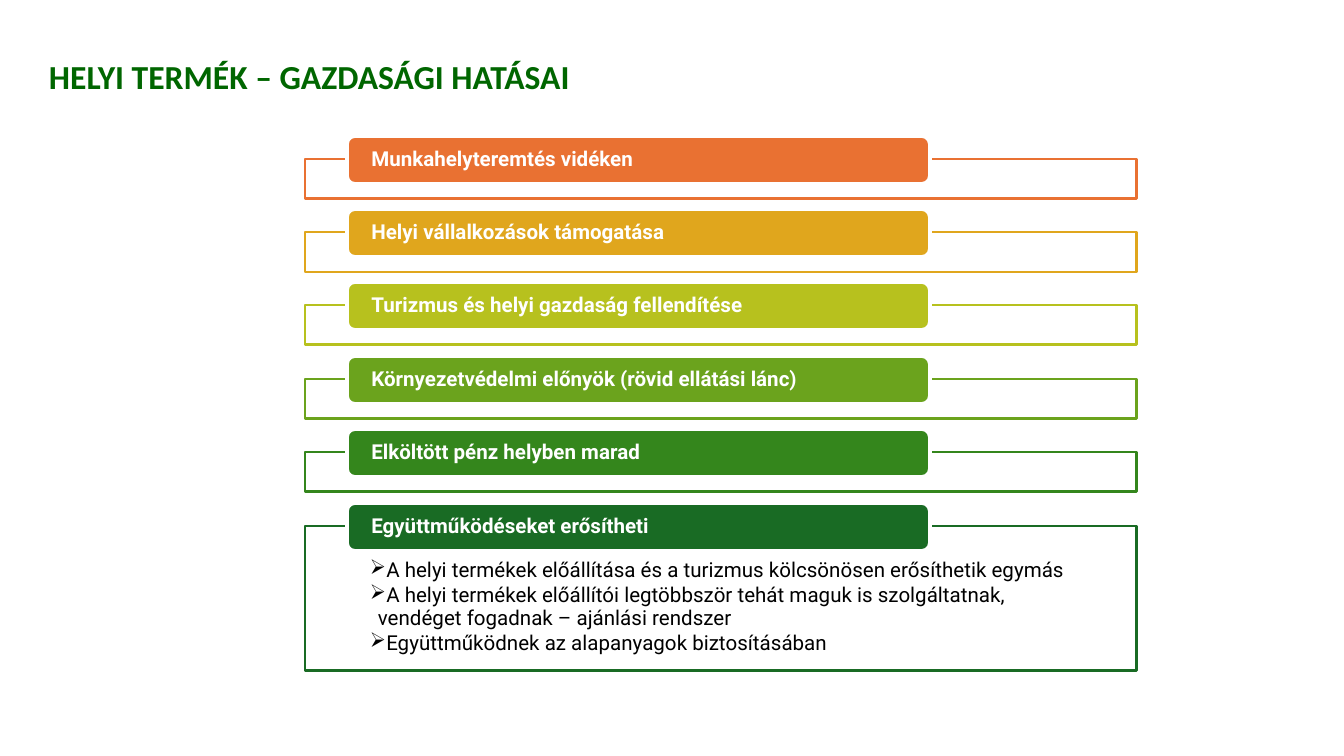
from dataclasses import dataclass

import lxml.etree
import pptx
import pptx.dml.color
import pptx.enum.shapes
import pptx.enum.text
import pptx.oxml.ns
import pptx.util

RGB = pptx.dml.color.RGBColor
KIND = pptx.enum.shapes.MSO_SHAPE
ANCHOR = pptx.enum.text.MSO_ANCHOR
ALIGN = pptx.enum.text.PP_ALIGN

SCALE = 914400 / 134.4
WHITE = RGB(0xFF, 0xFF, 0xFF)
BLACK = RGB(0x00, 0x00, 0x00)
GREEN = RGB(0x00, 0x66, 0x00)
ORANGE = RGB(0xE9, 0x71, 0x32)
AMBER = RGB(0xE0, 0xA6, 0x1D)
LIME = RGB(0xB7, 0xC1, 0x1E)
GRASS = RGB(0x6B, 0xA3, 0x1D)
LEAF = RGB(0x34, 0x86, 0x1C)
FOREST = RGB(0x19, 0x6B, 0x24)

TOP = 136
SPAN = 367


@dataclass(frozen=True)
class Row:
    head: str
    color: RGB
    height: int = 40
    points: tuple[str, ...] = ()


ROWS = (
    Row("Munkahelyteremtés vidéken", ORANGE),
    Row("Helyi vállalkozások támogatása", AMBER),
    Row("Turizmus és helyi gazdaság fellendítése", LIME),
    Row("Környezetvédelmi előnyök (rövid ellátási lánc)", GRASS),
    Row("Elköltött pénz helyben marad", LEAF),
    Row("Együttműködéseket erősítheti", FOREST, 145, (
        "A helyi termékek előállítása és a turizmus kölcsönösen erősíthetik egymás",
        "A helyi termékek előállítói legtöbbször tehát maguk is szolgáltatnak, "
        "vendéget fogadnak – ajánlási rendszer",
        "Együttműködnek az alapanyagok biztosításában",
    )),
)


def px(size: int) -> int:
    return round(size * SCALE)


def child(node, tag: str, **attrs: str):
    return lxml.etree.SubElement(node, pptx.oxml.ns.qn(tag), attrs)


def write(shape, *lines: str, color: RGB, size: int = 11, font: str = "Roboto",
          bold: bool = False, inset: tuple[int, int, int, int] = (22, 0, 22, 0),
          anchor=ANCHOR.MIDDLE, space: float = 0.9, bullet: str = "") -> None:
    frame = shape.text_frame
    frame.word_wrap = True
    frame.vertical_anchor = anchor
    (frame.margin_left, frame.margin_top,
     frame.margin_right, frame.margin_bottom) = map(px, inset)
    for i, line in enumerate(lines):
        para = frame.add_paragraph() if i else frame.paragraphs[0]
        para.alignment = ALIGN.LEFT
        para.line_spacing = space
        if bullet:
            para.space_after = pptx.util.Pt(1.6)
            props = para._p.get_or_add_pPr()
            props.set("marL", str(px(8)))
            props.set("indent", str(px(-8)))
            child(props, "a:buChar", char=bullet)
        run = para.add_run()
        run.text = line
        run.font.name = font
        run.font.size = pptx.util.Pt(size)
        run.font.bold = bold
        run.font.color.rgb = color


def block(slide, kind, box: tuple[int, int, int, int], fill: RGB,
          line: RGB, width: float):
    shape = slide.shapes.add_shape(kind, *map(px, box))
    shape.shadow.inherit = False
    shape.fill.solid()
    shape.fill.fore_color.rgb = fill
    shape.line.color.rgb = line
    shape.line.width = pptx.util.Pt(width)
    return shape


def draw(slide, row: Row, top: int) -> None:
    frame = block(slide, KIND.RECTANGLE, (305, top + 23, 832, row.height),
                  WHITE, row.color, 1.5)
    tint = frame._element.spPr.find(".//" + pptx.oxml.ns.qn("a:srgbClr"))
    child(tint, "a:alpha", val="90000")
    if row.points:
        write(frame, *row.points, color=BLACK, inset=(65, 34, 65, 12),
              anchor=ANCHOR.TOP, bullet="➢")
    label = block(slide, KIND.ROUNDED_RECTANGLE, (347, top, 583, 48),
                  row.color, WHITE, 2)
    write(label, row.head, color=WHITE, bold=True)


def main() -> None:
    deck = pptx.Presentation()
    deck.slide_width, deck.slide_height = px(1344), px(756)
    slide = deck.slides.add_slide(deck.slide_layouts[6])
    title = slide.shapes.add_textbox(*map(px, (37, 39, 1218, 74)))
    write(title, "HELYI TERMÉK – GAZDASÁGI HATÁSAI", color=GREEN, size=18,
          font="Calibri", bold=True, inset=(12, 6, 12, 6), space=1.0)
    for i, row in enumerate(ROWS):
        draw(slide, row, TOP + SPAN * i // (len(ROWS) - 1))
    deck.save("out.pptx")


if __name__ == "__main__":
    main()
